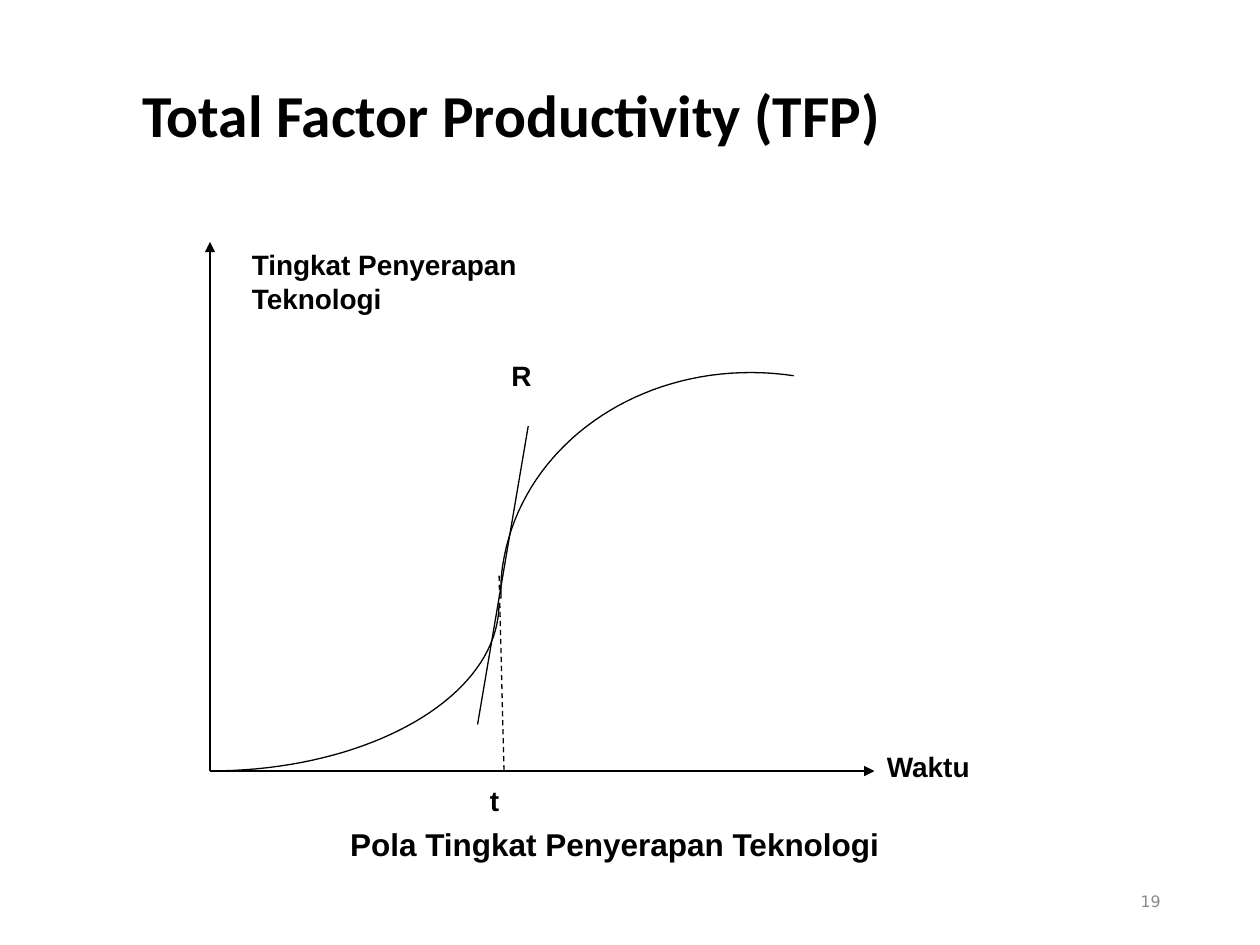
from dataclasses import dataclass

from lxml import etree
from pptx import Presentation
from pptx.dml.color import RGBColor
from pptx.enum.dml import MSO_LINE
from pptx.enum.shapes import MSO_CONNECTOR, MSO_SHAPE
from pptx.enum.text import MSO_ANCHOR, MSO_AUTO_SIZE, PP_ALIGN
from pptx.oxml.ns import qn
from pptx.util import Pt

STRAIGHT = MSO_CONNECTOR.STRAIGHT
RECTANGLE = MSO_SHAPE.RECTANGLE
DASH = MSO_LINE.DASH
TOP, MIDDLE = MSO_ANCHOR.TOP, MSO_ANCHOR.MIDDLE
LEFT, CENTER, RIGHT = PP_ALIGN.LEFT, PP_ALIGN.CENTER, PP_ALIGN.RIGHT
NO_AUTOFIT = MSO_AUTO_SIZE.NONE
TITLE_ONLY = 5

Point = tuple[float, float]


@dataclass(frozen=True)
class TextStyle:
    font: str
    size: float
    color: RGBColor
    bold: bool = True


@dataclass(frozen=True)
class Theme:
    ink = RGBColor(0, 0, 0)
    paper = RGBColor(255, 255, 255)
    line_width = 0.75
    title = TextStyle("Calibri", 34, ink)
    label = TextStyle("Arial", 16, ink)
    caption = TextStyle("Arial", 18, ink)
    number = TextStyle("DejaVu Sans", 9, RGBColor(0x89, 0x89, 0x89), False)


@dataclass(frozen=True)
class Box:
    left: float
    top: float
    width: float
    height: float

    def lengths(self) -> tuple[Pt, Pt, Pt, Pt]:
        return Pt(self.left), Pt(self.top), Pt(self.width), Pt(self.height)


@dataclass(frozen=True)
class Label:
    text: str
    box: Box


@dataclass(frozen=True)
class Segment:
    start: Point
    end: Point
    arrow: bool = False
    dashed: bool = False


THEME = Theme()
ORIGIN = (120, 440.6)
INFLECTION_X = 285.2

AXES = (
    Segment(ORIGIN, (ORIGIN[0], 138.2), arrow=True),
    Segment(ORIGIN, (499.7, ORIGIN[1]), arrow=True),
)
TANGENT = Segment((305.3, 223.2), (272.9, 414))
TIME_MARK = Segment((INFLECTION_X, 329), (288, ORIGIN[1]), dashed=True)

# Each curve is a start point and a list of cubic Bézier pieces.
LOWER_CURVE = (ORIGIN, [((211, 440.6), (INFLECTION_X, 398.2), (INFLECTION_X, 344.9))])
UPPER_CURVE = ((453.6, 214.7), [
    ((372.2, 202.7), (298.2, 251.2), (287.3, 323)),
    ((286.4, 329.2), (286, 335.6), (286.4, 342)),
])

LABELS = (
    Label("Tingkat Penyerapan Teknologi", Box(136.8, 138.2, 181.4, 57.6)),
    Label("Waktu", Box(499.7, 424.8, 82.8, 41.8)),
    Label("R", Box(285.1, 201.6, 33.1, 41.8)),
    Label("t", Box(272.9, 444.2, 33.1, 41.8)),
)


def write(shape, text: str, style: TextStyle, align=LEFT, anchor=TOP):
    frame = shape.text_frame
    frame.word_wrap = True
    frame.auto_size = NO_AUTOFIT
    frame.vertical_anchor = anchor
    paragraph = frame.paragraphs[0]
    paragraph.alignment = align
    run = paragraph.add_run()
    run.text = text
    run.font.name = style.font
    run.font.size = Pt(style.size)
    run.font.bold = style.bold
    run.font.color.rgb = style.color
    return paragraph


def ink_line(shape) -> None:
    shape.line.color.rgb = THEME.ink
    shape.line.width = Pt(THEME.line_width)


def add_segment(slide, segment: Segment) -> None:
    ends = [Pt(value) for value in (*segment.start, *segment.end)]
    connector = slide.shapes.add_connector(STRAIGHT, *ends)
    ink_line(connector)
    if segment.dashed:
        connector.line.dash_style = DASH
    properties = connector._element.spPr
    if segment.arrow:
        etree.SubElement(properties.find(qn("a:ln")), qn("a:tailEnd"), type="triangle")
    etree.SubElement(properties, qn("a:effectLst"))


def bezier_points(start: Point, pieces: list, steps: int = 40) -> list[Point]:
    """Sample joined cubic Bézier pieces, leaving out the start point."""
    points = []
    for first, second, end in pieces:
        for step in range(1, steps + 1):
            t = step / steps
            u = 1 - t
            weights = (u**3, 3 * u * u * t, 3 * u * t * t, t**3)
            corners = (start, first, second, end)
            points.append(tuple(
                sum(w * corner[axis] for w, corner in zip(weights, corners))
                for axis in (0, 1)
            ))
        start = end
    return points


def add_curve(slide, start: Point, pieces: list) -> None:
    builder = slide.shapes.build_freeform(Pt(start[0]), Pt(start[1]))
    points = bezier_points(start, pieces)
    builder.add_line_segments([(Pt(x), Pt(y)) for x, y in points], close=False)
    curve = builder.convert_to_shape()
    curve.shadow.inherit = False
    curve.fill.background()
    ink_line(curve)


def add_label(slide, label: Label) -> None:
    shape = slide.shapes.add_shape(RECTANGLE, *label.box.lengths())
    shape.shadow.inherit = False
    shape.fill.solid()
    shape.fill.fore_color.rgb = THEME.paper
    shape.line.fill.background()
    write(shape, label.text, THEME.label)


def add_text(slide, box: Box, text: str, style: TextStyle, align, anchor=TOP) -> None:
    write(slide.shapes.add_textbox(*box.lengths()), text, style, align, anchor)


def main() -> None:
    presentation = Presentation()
    presentation.slide_width, presentation.slide_height = Pt(720), Pt(540)
    slide = presentation.slides.add_slide(presentation.slide_layouts[TITLE_ONLY])

    title = slide.shapes.title
    title.left, title.top, title.width, title.height = Box(74.2, 33.1, 547.9, 69.1).lengths()
    heading = write(title, "Total Factor Productivity (TFP)", THEME.title, anchor=MIDDLE)
    heading.line_spacing = 0.9
    add_text(slide, Box(508.3, 500.4, 162, 28.8), "19", THEME.number, RIGHT, MIDDLE)

    for axis in AXES:
        add_segment(slide, axis)
    for start, pieces in (LOWER_CURVE, UPPER_CURVE):
        add_curve(slide, start, pieces)
    # The white label boxes hide the top of the tangent.
    add_segment(slide, TANGENT)
    for label in LABELS:
        add_label(slide, label)
    add_segment(slide, TIME_MARK)

    add_text(slide, Box(174.2, 468, 354.2, 28.8), "Pola Tingkat Penyerapan Teknologi",
             THEME.caption, CENTER)
    presentation.save("out.pptx")


if __name__ == "__main__":
    main()
